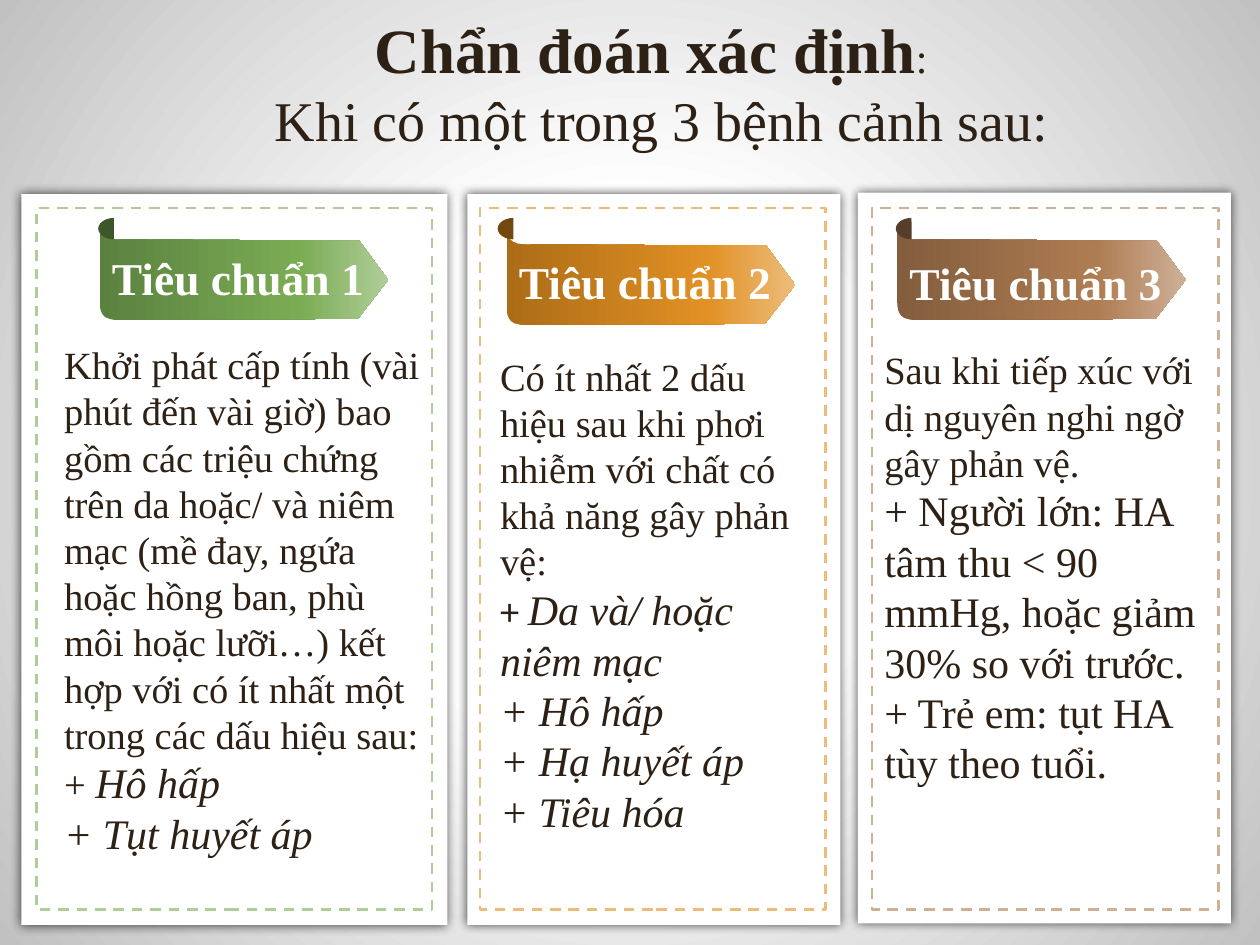
"""Build the slide on the three criteria for a confirmed diagnosis."""
from lxml import etree
from pptx import Presentation
from pptx.dml.color import RGBColor
from pptx.enum.dml import MSO_LINE
from pptx.enum.shapes import MSO_SHAPE
from pptx.enum.text import MSO_ANCHOR, PP_ALIGN
from pptx.oxml.ns import qn
from pptx.util import Inches, Pt

DASH = MSO_LINE.DASH
RECTANGLE, PIE = MSO_SHAPE.RECTANGLE, MSO_SHAPE.PIE
TOP, MIDDLE = MSO_ANCHOR.TOP, MSO_ANCHOR.MIDDLE
CENTER, LEFT = PP_ALIGN.CENTER, PP_ALIGN.LEFT

SERIF, SANS = "Times New Roman", "Calibri"
INK = RGBColor(0x2D, 0x20, 0x15)
WHITE = RGBColor(0xFF, 0xFF, 0xFF)
BLACK = RGBColor(0x00, 0x00, 0x00)
GREY = RGBColor(0xC1, 0xC1, 0xC1)

PLAIN = (22, SERIF, False, False)
LARGE = (24, SERIF, False, False)
ITALIC = (24, SERIF, False, True)
PLUS = (22, SANS, False, False)
LABEL = (26, SERIF, True, False)

TITLE = [
    [("Chẩn đoán xác định", (36, SERIF, True, False)), (": ", LARGE)],
    [(" ", LARGE), ("Khi có một trong 3 bệnh cảnh sau:", (32, SERIF, False, False))],
]

CRITERIA = [
    {
        "label": "Tiêu chuẩn 1",
        "body": [
            [("Khởi phát cấp tính (vài phút đến vài giờ) bao gồm các triệu chứng "
              "trên da hoặc/ và niêm mạc (mề đay, ngứa hoặc hồng ban, phù môi hoặc "
              "lưỡi…) kết hợp với có ít nhất một trong các dấu hiệu sau:", PLAIN)],
            [("+ ", PLAIN), ("Hô hấp", ITALIC)],
            [("+ Tụt huyết áp", ITALIC)],
        ],
        "colors": ("3D562A", "5B813F", "7AAC54", "AFCD98"),
        "card": (0.17, 1.54, 3.38, 5.8),
        "frame": (0.29, 1.65, 3.14, 5.57),
        "ribbon": (0.79, 1.79),
        "curl": 0.78,
        "label_top": 1.93,
        "text": (0.41, 2.66, 3.08, 4.5),
    },
    {
        "label": "Tiêu chuẩn 2",
        "body": [
            [("Có ít nhất 2 dấu hiệu sau khi phơi nhiễm với chất có khả năng gây "
              "phản vệ:", PLAIN)],
            [("+ ", PLUS), ("Da và/ hoặc niêm mạc", ITALIC)],
            [("+ Hô hấp", ITALIC)],
            [("+ Hạ huyết áp", ITALIC)],
            [("+ Tiêu hóa", ITALIC)],
        ],
        "colors": ("724810", "AC6C17", "E19023", "EDBC7B"),
        "card": (3.71, 1.54, 2.96, 5.8),
        "frame": (3.81, 1.65, 2.74, 5.57),
        "ribbon": (4.02, 1.83),
        "curl": 3.95,
        "label_top": 1.96,
        "text": (3.87, 2.75, 2.69, 4.38),
    },
    {
        "label": "Tiêu chuẩn 3",
        "body": [
            [("Sau khi tiếp xúc với dị nguyên nghi ngờ gây phản vệ.", PLAIN)],
            [("+ Người lớn: HA tâm thu < 90 mmHg, hoặc giảm 30% so với trước.", LARGE)],
            [("+ Trẻ em: tụt HA tùy theo tuổi.", LARGE)],
        ],
        "colors": ("573E29", "835D3D", "AE7C52", "CEB097"),
        "card": (6.81, 1.53, 2.96, 5.8),
        "frame": (6.92, 1.65, 2.75, 5.57),
        "ribbon": (7.12, 1.79),
        "curl": 7.11,
        "label_top": 1.97,
        "text": (6.92, 2.7, 2.75, 4.4),
    },
]


def inches(box):
    return [Inches(value) for value in box]


def set_gradient(element, stops, path=False):
    gradient = element.find(".//" + qn("a:gradFill"))
    for child in list(gradient):
        gradient.remove(child)
    stop_list = etree.SubElement(gradient, qn("a:gsLst"))
    for percent, color in stops:
        stop = etree.SubElement(stop_list, qn("a:gs"), pos=str(percent * 1000))
        etree.SubElement(stop, qn("a:srgbClr"), val=str(color))
    if path:
        circle = etree.SubElement(gradient, qn("a:path"), path="circle")
        etree.SubElement(circle, qn("a:fillToRect"),
                         dict.fromkeys("ltrb", "50000"))
    else:
        etree.SubElement(gradient, qn("a:lin"), ang="0", scaled="0")


def add_glow(shape):
    effects = shape._element.spPr.find(qn("a:effectLst"))
    glow = etree.SubElement(effects, qn("a:outerShdw"), blurRad=str(Pt(6)),
                            dist="0", dir="0", algn="ctr", rotWithShape="0")
    color = etree.SubElement(glow, qn("a:srgbClr"), val=str(BLACK))
    etree.SubElement(color, qn("a:alpha"), val="70000")


def add_solid(slide, kind, box, color):
    shape = slide.shapes.add_shape(kind, *inches(box))
    shape.shadow.inherit = False
    shape.fill.solid()
    shape.fill.fore_color.rgb = color
    shape.line.fill.background()
    return shape


def write(frame, paragraphs, color, anchor=TOP, align=LEFT):
    frame.word_wrap = True
    frame.vertical_anchor = anchor
    for index, pieces in enumerate(paragraphs):
        paragraph = frame.add_paragraph() if index else frame.paragraphs[0]
        paragraph.alignment = align
        for text, (size, face, bold, italic) in pieces:
            run = paragraph.add_run()
            run.text = text
            run.font.size = Pt(size)
            run.font.name = face
            run.font.bold = bold
            run.font.italic = italic
            run.font.color.rgb = color


def curve(start, first, second, end, steps=8):
    for t in (step / steps for step in range(1, steps + 1)):
        u = 1 - t
        yield tuple(u**3 * a + 3 * u * u * t * b + 3 * u * t * t * c + t**3 * d
                    for a, b, c, d in zip(start, first, second, end))


def add_ribbon(slide, origin, stops):
    start = (140, 750)
    outline = [(2050, 740), (2290, 430), (2060, 120), (220, 110),
               *curve((220, 110), (140, 110), (20, 130), (0, 0)),
               (0, 590),
               *curve((0, 590), (0, 730), (50, 740), start)]
    builder = slide.shapes.build_freeform(*start, scale=Inches(1) / 1000)
    builder.add_line_segments(outline, close=True)
    ribbon = builder.convert_to_shape(*inches(origin))
    ribbon.shadow.inherit = False
    ribbon.line.fill.background()
    ribbon.fill.gradient()
    set_gradient(ribbon._element, stops)


def add_criterion(slide, item):
    dark, start, middle, light = map(RGBColor.from_string, item["colors"])
    add_glow(add_solid(slide, RECTANGLE, item["card"], WHITE))

    border = slide.shapes.add_shape(RECTANGLE, *inches(item["frame"]))
    border.shadow.inherit = False
    border.fill.background()
    border.line.color.rgb = light
    border.line.width = Pt(1.5)
    border.line.dash_style = DASH

    add_ribbon(slide, item["ribbon"], [(0, start), (69, middle), (100, light)])
    curl = add_solid(slide, PIE, (item["curl"], 1.73, 0.25, 0.17), dark)
    curl.adjustments[0], curl.adjustments[1] = 54.3, 162
    curl._element.spPr.find(qn("a:xfrm")).set("flipV", "1")

    label = slide.shapes.add_textbox(
        *inches((item["ribbon"][0], item["label_top"], 2.3, 0.54)))
    write(label.text_frame, [[(item["label"], LABEL)]], WHITE, MIDDLE)
    body = slide.shapes.add_textbox(*inches(item["text"]))
    write(body.text_frame, item["body"], INK)


def main():
    deck = Presentation()
    deck.slide_width, deck.slide_height = Inches(10), Inches(7.5)
    slide = deck.slides.add_slide(deck.slide_layouts[5])
    slide.background.fill.gradient()
    set_gradient(slide._element, [(35, WHITE), (100, GREY)], path=True)

    title = slide.shapes.title
    title.left, title.top, title.width, title.height = inches((1.7, 0.03, 7.02, 1.4))
    write(title.text_frame, TITLE, INK, TOP, CENTER)
    for item in CRITERIA:
        add_criterion(slide, item)
    deck.save("out.pptx")


if __name__ == "__main__":
    main()
